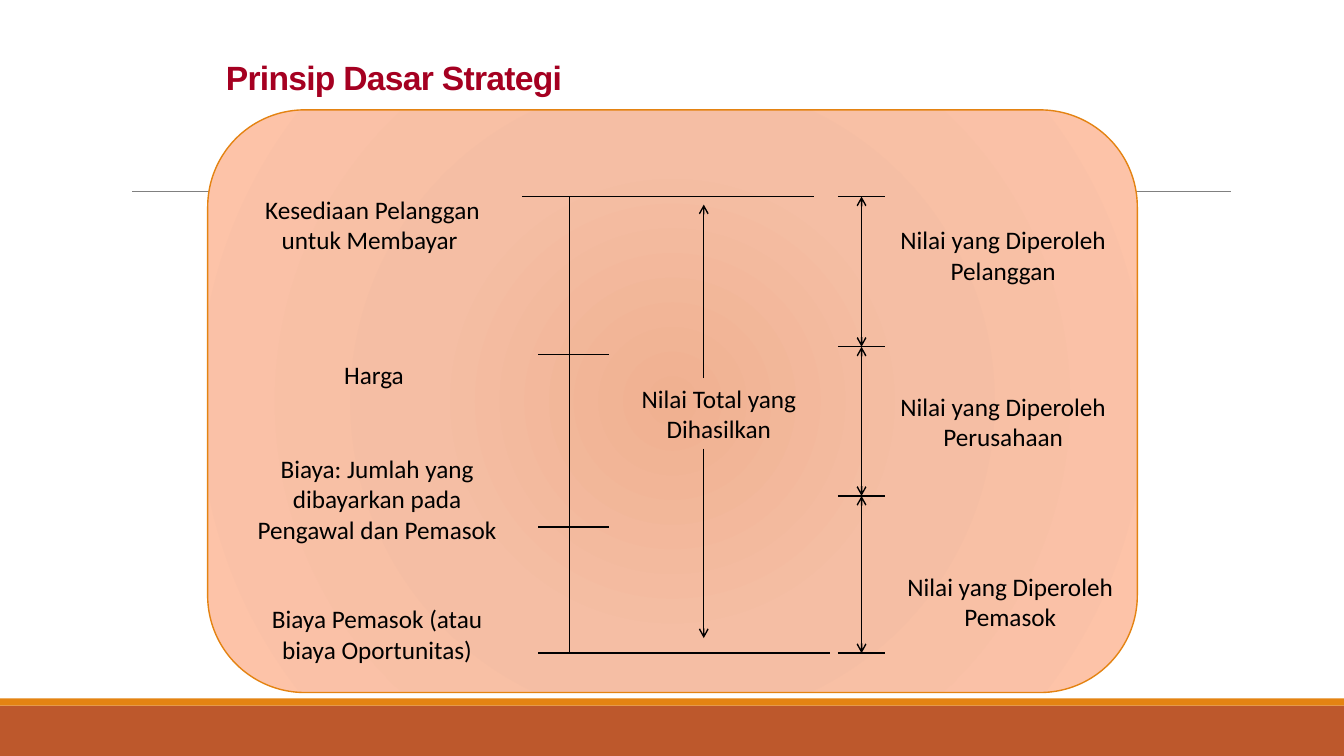
from dataclasses import dataclass
from itertools import pairwise

from lxml.etree import SubElement
from pptx import Presentation
from pptx.dml.color import RGBColor
from pptx.enum.shapes import MSO_CONNECTOR, MSO_SHAPE
from pptx.enum.text import MSO_ANCHOR, MSO_AUTO_SIZE, PP_ALIGN
from pptx.oxml import parse_xml
from pptx.oxml.ns import nsdecls, qn
from pptx.util import Inches, Pt


@dataclass(frozen=True)
class Theme:
    band: str = "BD582C"
    accent: str = "E48312"
    rule: str = "808080"
    ink: str = "000000"
    title: str = "A50021"
    panel_stops: tuple = ((0, "F0B191"), (45, "F5BEA4"), (100, "FDC3A8"))
    title_font: str = "Arial"
    body_font: str = "Calibri"
    title_size: int = 24
    body_size: int = 18


THEME = Theme()


def set_format(target, values):
    for name, value in values.items():
        setattr(target, name, value)


def set_font(paragraph, name, size, color, bold=False):
    set_format(paragraph.font, {"name": name, "size": Pt(size), "bold": bold})
    paragraph.font.color.rgb = RGBColor.from_string(color)


def add_line(slide, start, end, color=THEME.ink, width=1, arrows=()):
    """Draw a straight line; arrows may hold headEnd (at start) and tailEnd (at end)."""
    points = [Inches(value) for value in (*start, *end)]
    line = slide.shapes.add_connector(MSO_CONNECTOR.STRAIGHT, *points)
    line.line.color.rgb = RGBColor.from_string(color)
    line.line.width = Pt(width)
    for arrow in arrows:
        SubElement(line.line._get_or_add_ln(), qn(f"a:{arrow}"), type="arrow")
    SubElement(line._element.spPr, qn("a:effectLst"))


def add_filled_shape(slide, kind, box, color):
    shape = slide.shapes.add_shape(kind, *[Inches(value) for value in box])
    shape.shadow.inherit = False
    shape.fill.solid()
    shape.fill.fore_color.rgb = RGBColor.from_string(color)
    shape.line.fill.background()
    return shape


def add_label(slide, text, box, wrap=True):
    label = slide.shapes.add_textbox(*[Inches(value) for value in box])
    set_format(label.text_frame, {
        "text": text, "word_wrap": wrap, "auto_size": MSO_AUTO_SIZE.SHAPE_TO_FIT_TEXT,
    })
    paragraph = label.text_frame.paragraphs[0]
    paragraph.alignment = PP_ALIGN.CENTER
    set_font(paragraph, THEME.body_font, THEME.body_size, THEME.ink)


def add_backdrop(slide, width, height):
    """Draw the footer bands and the rule under the title area."""
    band_top = height - 0.5
    add_filled_shape(slide, MSO_SHAPE.RECTANGLE, (0, band_top, width, 0.5), THEME.band)
    add_filled_shape(slide, MSO_SHAPE.RECTANGLE, (0, band_top - 0.07, width, 0.07), THEME.accent)
    add_line(slide, (1.31, 1.9), (12.21, 1.9), THEME.rule, 0.5)


def add_title(slide, text, box):
    title = slide.shapes.title
    left, top, width, height = [Inches(value) for value in box]
    set_format(title, {"left": left, "top": top, "width": width, "height": height})
    set_format(title.text_frame, {
        "text": text, "word_wrap": True, "auto_size": MSO_AUTO_SIZE.NONE,
        "vertical_anchor": MSO_ANCHOR.BOTTOM,
    })
    paragraph = title.text_frame.paragraphs[0]
    set_format(paragraph, {"alignment": PP_ALIGN.LEFT, "line_spacing": 0.85})
    set_font(paragraph, THEME.title_font, THEME.title_size, THEME.title, bold=True)
    paragraph.runs[0].font._element.set("spc", "-50")


def add_panel(slide, box):
    panel = add_filled_shape(slide, MSO_SHAPE.ROUNDED_RECTANGLE, box, THEME.accent)
    panel.line.color.rgb = RGBColor.from_string(THEME.accent)
    panel.line.width = Pt(1)
    stops = "".join(
        f'<a:gs pos="{position * 1000}"><a:srgbClr val="{color}"/></a:gs>'
        for position, color in THEME.panel_stops
    )
    gradient = parse_xml(
        f'<a:gradFill {nsdecls("a")} rotWithShape="1"><a:gsLst>{stops}</a:gsLst>'
        '<a:path path="circle">'
        '<a:fillToRect l="100000" t="100000" r="100000" b="100000"/>'
        "</a:path></a:gradFill>"
    )
    properties = panel._element.spPr
    properties.replace(properties.find(qn("a:solidFill")), gradient)


def add_price_scale(slide, box):
    """Draw the vertical scale, its levels and the labels to its left."""
    left, top, width, height = box
    bottom = top + height
    axis, tick_left = left + 3.44, left + 3.13
    add_line(slide, (axis, top), (axis, bottom))
    add_line(slide, (left + 2.97, top), (left + width - 0.16, top))
    add_line(slide, (tick_left, bottom), (left + width, bottom))
    for offset in (1.57, 3.28):
        add_line(slide, (tick_left, top + offset), (tick_left + 0.7, top + offset))

    add_label(slide, "Kesediaan Pelanggan untuk Membayar ", (left, top - 0.07, 2.97, 0.71))
    add_label(slide, "Harga", (left + 1.1, top + 1.57, 0.8, 0.4), wrap=False)
    add_label(slide, "Biaya: Jumlah yang dibayarkan pada Pengawal dan Pemasok",
              (left + 0.24, top + 2.5, 2.58, 1.02))
    add_label(slide, "Biaya Pemasok (atau biaya Oportunitas)",
              (left + 0.32, top + 3.99, 2.42, 0.71))


def add_total_value(slide, box):
    """Place the total label with one arrow to the top and one to the bottom of the box."""
    left, top, width, height = box
    label_top, label_height = top + 1.72, 0.71
    arrow_x = left + 1.02
    add_label(slide, "Nilai Total yang Dihasilkan", (left, label_top, width, label_height))
    add_line(slide, (arrow_x, label_top), (arrow_x, top), arrows=["tailEnd"])
    add_line(slide, (arrow_x, label_top + label_height - 0.01), (arrow_x, top + height),
             arrows=["tailEnd"])


def add_value_shares(slide, box):
    """Split the height into three shares, each with a double arrow and a label."""
    left, top, width, height = box
    tick_width, label_width = 0.47, 2.34
    axis = left + tick_width / 2
    levels = [top, top + 1.49, top + 2.97, top + height]
    for level in levels:
        add_line(slide, (left, level), (left + tick_width, level))
    for start, end in pairwise(levels):
        add_line(slide, (axis, start), (axis, end), arrows=["headEnd", "tailEnd"])
    shares = (("Pelanggan", 0, 0.23), ("Perusahaan", 0, 1.88), ("Pemasok", 0.07, 3.67))
    for receiver, shift, offset in shares:
        add_label(slide, f"Nilai yang Diperoleh {receiver}",
                  (left + tick_width + shift, top + offset, label_width, 0.71))


def build_strategy_slide(presentation, width, height):
    slide = presentation.slides.add_slide(presentation.slide_layouts[5])
    add_backdrop(slide, width, height)
    add_panel(slide, (2.06, 1.09, 9.22, 5.78))
    add_title(slide, "Prinsip Dasar Strategi", (2.14, 0.16, 9, 0.86))
    diagram_top, diagram_height = 1.95, 4.53
    add_price_scale(slide, (2.21, diagram_top, 6.02, diagram_height))
    add_total_value(slide, (5.96, diagram_top + 0.08, 2.34, 4.3))
    add_value_shares(slide, (8.31, diagram_top, 2.88, diagram_height))


def main():
    width, height = 13.33, 7.5
    presentation = Presentation()
    set_format(presentation, {"slide_width": Inches(width), "slide_height": Inches(height)})
    build_strategy_slide(presentation, width, height)
    presentation.save("out.pptx")


if __name__ == "__main__":
    main()
